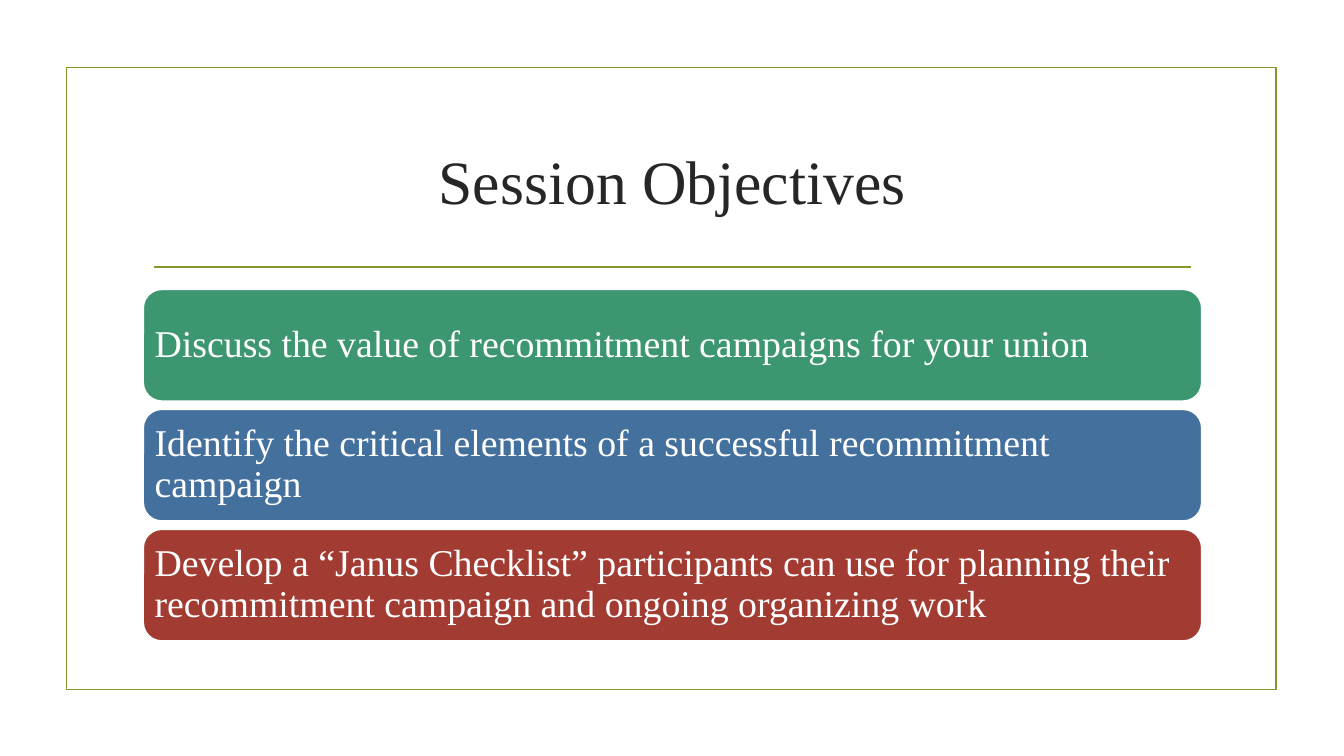
from lxml import etree
from pptx import Presentation
from pptx.dml.color import RGBColor
from pptx.enum.shapes import MSO_CONNECTOR, MSO_SHAPE
from pptx.enum.text import MSO_ANCHOR, PP_ALIGN
from pptx.oxml.ns import qn
from pptx.util import Pt

PX = 9144  # 100 px to the inch
RECT, ROUNDED = MSO_SHAPE.RECTANGLE, MSO_SHAPE.ROUNDED_RECTANGLE
STRAIGHT = MSO_CONNECTOR.STRAIGHT
MIDDLE = MSO_ANCHOR.MIDDLE
LEFT, CENTER = PP_ALIGN.LEFT, PP_ALIGN.CENTER

FONT = "Times New Roman"
LINE_WIDTH = 1.25
COLORS = {
    "white": "FFFFFF",
    "olive": "83992A",
    "ink": "262626",
    "green": "3C9770",
    "blue": "44709D",
    "red": "A23C33",
}
OBJECTIVES = [
    ("green", "Discuss the value of recommitment campaigns for your union"),
    ("blue", "Identify the critical elements of a successful recommitment campaign"),
    ("red", "Develop a “Janus Checklist” participants can use for planning their "
            "recommitment campaign and ongoing organizing work"),
]
BAR_LEFT, BAR_TOP, BAR_WIDTH, BAR_HEIGHT, BAR_PITCH = 142, 287, 1050, 111, 119


def px(*lengths):
    return [length * PX for length in lengths]


def rgb(name):
    return RGBColor.from_string(COLORS[name])


def set_line(line, color):
    line.color.rgb = rgb(color)
    line.width = Pt(LINE_WIDTH)


def set_text(box, text, size, color, align, margin, spacing):
    frame = box.text_frame
    frame_format = {"word_wrap": True, "vertical_anchor": MIDDLE}
    for side in ("left", "top", "right", "bottom"):
        frame_format[f"margin_{side}"] = margin * PX
    for name, value in frame_format.items():
        setattr(frame, name, value)
    para = frame.paragraphs[0]
    para.alignment, para.line_spacing = align, spacing
    span = para.add_run()
    span.text = text
    for name, value in {"name": FONT, "size": Pt(size)}.items():
        setattr(span.font, name, value)
    span.font.color.rgb = rgb(color)


def add_panel(page, kind, bounds, line, fill=None):
    """Add an outlined shape, unfilled when no fill is named."""
    panel = page.shapes.add_shape(kind, *px(*bounds))
    panel.shadow.inherit = False
    set_line(panel.line, line)
    if fill:
        panel.fill.solid()
        panel.fill.fore_color.rgb = rgb(fill)
    else:
        panel.fill.background()
    return panel


def add_rule(page, left, right, y):
    rule = page.shapes.add_connector(STRAIGHT, *px(left, y, right, y))
    set_line(rule.line, "olive")
    etree.SubElement(rule.line._get_or_add_ln().getparent(), qn("a:effectLst"))


def add_title(page, text):
    box = page.shapes.add_textbox(*px(142, 107, 1050, 143))
    set_text(box, text, 44, "ink", CENTER, margin=5, spacing=1.0)


def add_objective(page, row, color, text):
    bounds = (BAR_LEFT, BAR_TOP + row * BAR_PITCH, BAR_WIDTH, BAR_HEIGHT)
    bar = add_panel(page, ROUNDED, bounds, "white", color)
    set_text(bar, text, 27, "white", LEFT, margin=6, spacing=0.9)


def main():
    deck = Presentation()
    deck.slide_width, deck.slide_height = px(1333, 750)
    page = deck.slides.add_slide(deck.slide_layouts[6])
    add_panel(page, RECT, (66, 67, 1200, 617), "olive")
    add_rule(page, 153, 1181, 265)
    add_title(page, "Session Objectives")
    for row, (color, text) in enumerate(OBJECTIVES):
        add_objective(page, row, color, text)
    deck.save("out.pptx")


if __name__ == "__main__":
    main()
